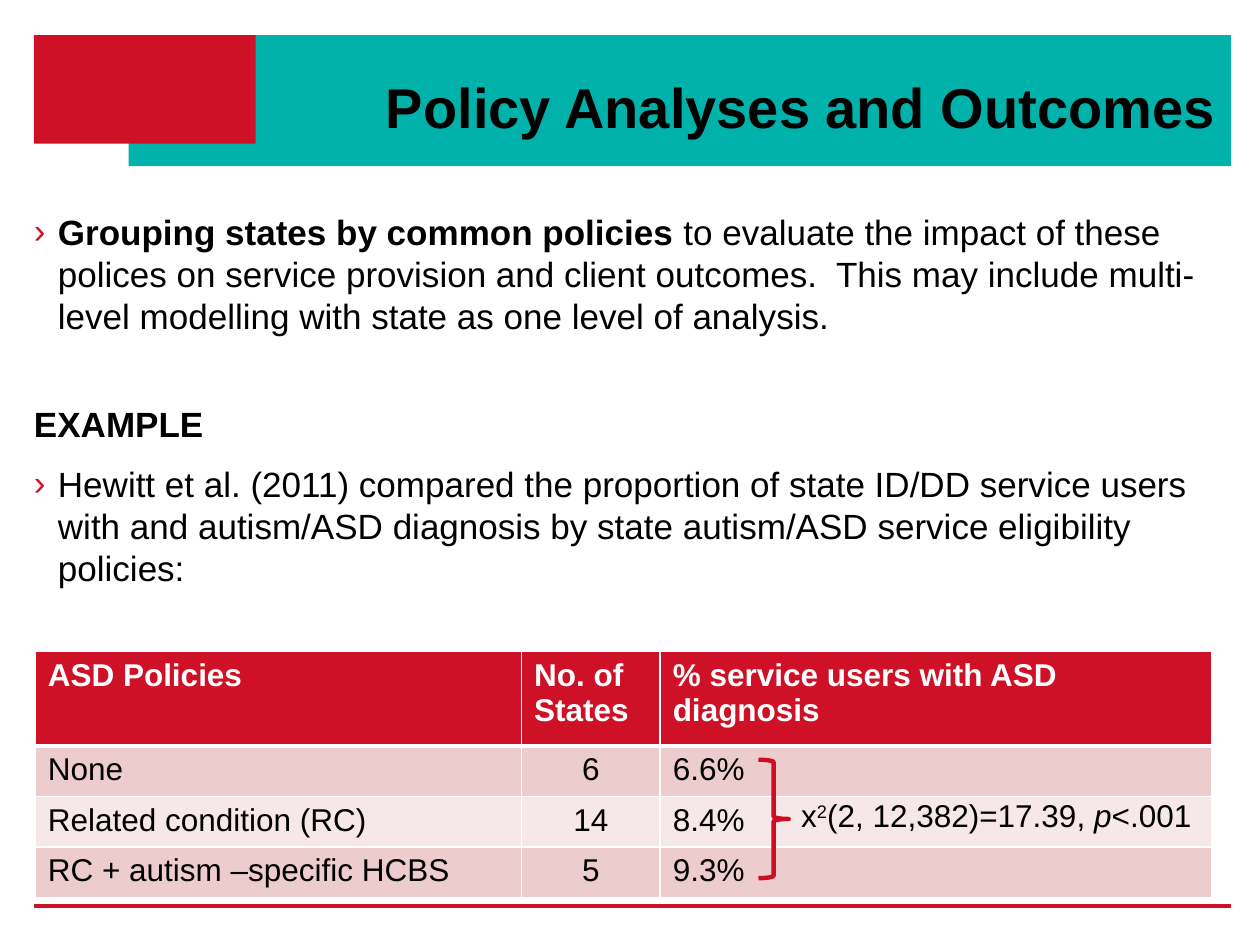
from dataclasses import dataclass

from lxml import etree
from pptx import Presentation
from pptx import util as u
from pptx.dml.color import RGBColor
from pptx.enum import shapes, text
from pptx.oxml import ns

Inches, Pt = u.Inches, u.Pt


@dataclass(frozen=True)
class Theme:
    font: str = "Arial"
    teal: str = "00B2A9"
    red: str = "CE1126"
    brace: str = "CE0C22"
    black: str = "000000"
    white: str = "FFFFFF"
    bands: tuple = ("EDCCCD", "F6E7E8")
    title: int = 32
    body: int = 20
    table: int = 18


THEME = Theme()


def rgb(value):
    return RGBColor.from_string(value)


def add_element(parent, tag, **attributes):
    return etree.SubElement(parent, ns.qn(tag), attributes)


def add_run(paragraph, wording, size, color=THEME.black, bold=False, italic=False):
    run = paragraph.add_run()
    run.text = wording
    font = run.font
    font.name, font.size = THEME.font, Pt(size)
    font.bold, font.italic = bold, italic
    font.color.rgb = rgb(color)
    return run


def add_block(slide, box, color):
    block = slide.shapes.add_shape(shapes.MSO_SHAPE.RECTANGLE, *map(Inches, box))
    block.shadow.inherit = False
    block.fill.solid()
    block.fill.fore_color.rgb = rgb(color)
    block.line.fill.background()


def add_header(slide, box, wording):
    left, top, width, height = box
    add_block(slide, (left + 0.75, top, width - 0.75, height), THEME.teal)
    add_block(slide, (left, top, 1.76, 0.86), THEME.red)

    title = slide.shapes.title
    title.left, title.top = Inches(left + 1.76), Inches(top + 0.19)
    title.width, title.height = Inches(7.72), Inches(0.69)
    frame = title.text_frame
    frame.word_wrap = True
    frame.auto_size = text.MSO_AUTO_SIZE.NONE
    frame.vertical_anchor = text.MSO_ANCHOR.BOTTOM
    paragraph = frame.paragraphs[0]
    paragraph.alignment = text.PP_ALIGN.RIGHT
    paragraph.line_spacing = Pt(25)
    add_run(paragraph, wording, THEME.title, bold=True)
    title.element.getparent().append(title.element)


def add_bullet(paragraph):
    properties = paragraph._p.get_or_add_pPr()
    properties.set("marL", str(Inches(0.19)))
    properties.set("indent", str(-Inches(0.19)))
    color = add_element(properties, "a:buClr")
    add_element(color, "a:srgbClr", val=THEME.red)
    add_element(properties, "a:buFont", typeface=THEME.font)
    add_element(properties, "a:buChar", char="›")


def add_body(slide, box, paragraphs):
    frame = slide.shapes.add_textbox(*map(Inches, box)).text_frame
    frame.word_wrap = True
    frame.margin_left = 0
    for index, (bulleted, space_before, runs) in enumerate(paragraphs):
        paragraph = frame.add_paragraph() if index else frame.paragraphs[0]
        if bulleted:
            add_bullet(paragraph)
        paragraph.line_spacing = Pt(24)
        paragraph.space_before = Pt(space_before)
        paragraph.space_after = Pt(5)
        for wording, bold in runs:
            add_run(paragraph, wording, THEME.body, bold=bold)


def set_borders(cell, top, bottom):
    properties = cell._tc.get_or_add_tcPr()
    for side, width in (("L", 1), ("R", 1), ("T", top), ("B", bottom)):
        border = add_element(properties, f"a:ln{side}", w=str(Pt(width)))
        fill = add_element(border, "a:solidFill")
        add_element(fill, "a:srgbClr", val=THEME.white)


def add_policy_table(slide, box, column_widths, rows):
    table = slide.shapes.add_table(
        len(rows), len(column_widths), *map(Inches, box)
    ).table
    for column, width in zip(table.columns, column_widths):
        column.width = Inches(width)
    for row_index, values in enumerate(rows):
        header = row_index == 0
        table.rows[row_index].height = Inches(0.75 if header else 0.38)
        fill = THEME.red if header else THEME.bands[(row_index - 1) % 2]
        for column_index, value in enumerate(values):
            cell = table.cell(row_index, column_index)
            set_borders(cell, 3 if row_index == 1 else 1, 3 if header else 1)
            cell.fill.solid()
            cell.fill.fore_color.rgb = rgb(fill)
            paragraph = cell.text_frame.paragraphs[0]
            if column_index == 1 and not header:
                paragraph.alignment = text.PP_ALIGN.CENTER
            color = THEME.white if header else THEME.black
            add_run(paragraph, value, THEME.table, color, bold=header)


def add_test_result(slide, box):
    left, top, width, height = box
    brace = slide.shapes.add_shape(
        shapes.MSO_SHAPE.RIGHT_BRACE,
        Inches(left), Inches(top), Inches(0.24), Inches(height),
    )
    brace.shadow.inherit = False
    brace.fill.background()
    brace.line.color.rgb = rgb(THEME.brace)
    brace.line.width = Pt(2.5)

    label = slide.shapes.add_textbox(
        Inches(left + 0.24), Inches(top + 0.24), Inches(width - 0.24), Inches(0.71)
    )
    label.text_frame.word_wrap = True
    paragraph = label.text_frame.paragraphs[0]
    add_run(paragraph, "x", THEME.table)
    exponent = add_run(paragraph, "2", THEME.table)
    exponent.font._element.set("baseline", "30000")
    add_run(paragraph, "(2, 12,382)=17.39, ", THEME.table)
    add_run(paragraph, "p", THEME.table, italic=True)
    add_run(paragraph, "<.001", THEME.table)


def add_footer_rule(slide, left, right, y):
    rule = slide.shapes.add_connector(
        shapes.MSO_CONNECTOR.STRAIGHT, *map(Inches, (left, y, right, y))
    )
    rule.line.color.rgb = rgb(THEME.red)
    rule.line.width = Pt(2.25)
    add_element(rule._element.spPr, "a:effectLst")


def main():
    presentation = Presentation()
    presentation.slide_width, presentation.slide_height = Inches(10), Inches(7.5)
    slide = presentation.slides.add_slide(presentation.slide_layouts[5])

    add_footer_rule(slide, 0.27, 9.77, 7.19)
    add_header(slide, (0.27, 0.28, 9.5, 1.04), "Policy Analyses and Outcomes")
    add_body(slide, (0.27, 1.62, 9.47, 5.43), [
        (True, 0, [
            ("Grouping states by common policies ", True),
            ("to evaluate the impact of these polices on service provision and "
             "client outcomes.  This may include multi-level modelling with "
             "state as one level of analysis.", False),
        ]),
        (False, 33, [("EXAMPLE", True)]),
        (True, 5, [
            ("Hewitt et al. (2011) compared the proportion of state ID/DD "
             "service users with and autism/ASD diagnosis by state autism/ASD "
             "service eligibility policies:", False),
        ]),
    ])
    add_policy_table(slide, (0.28, 5.17, 9.34, 1.89), (3.86, 1.1, 4.38), [
        ("ASD Policies", "No. of States", "% service users with ASD diagnosis"),
        ("None", "6", "6.6%"),
        ("Related condition (RC)", "14", "8.4%"),
        ("RC + autism –specific HCBS", "5", "9.3%"),
    ])
    add_test_result(slide, (6.02, 6.03, 3.63, 0.94))
    presentation.save("out.pptx")


if __name__ == "__main__":
    main()
